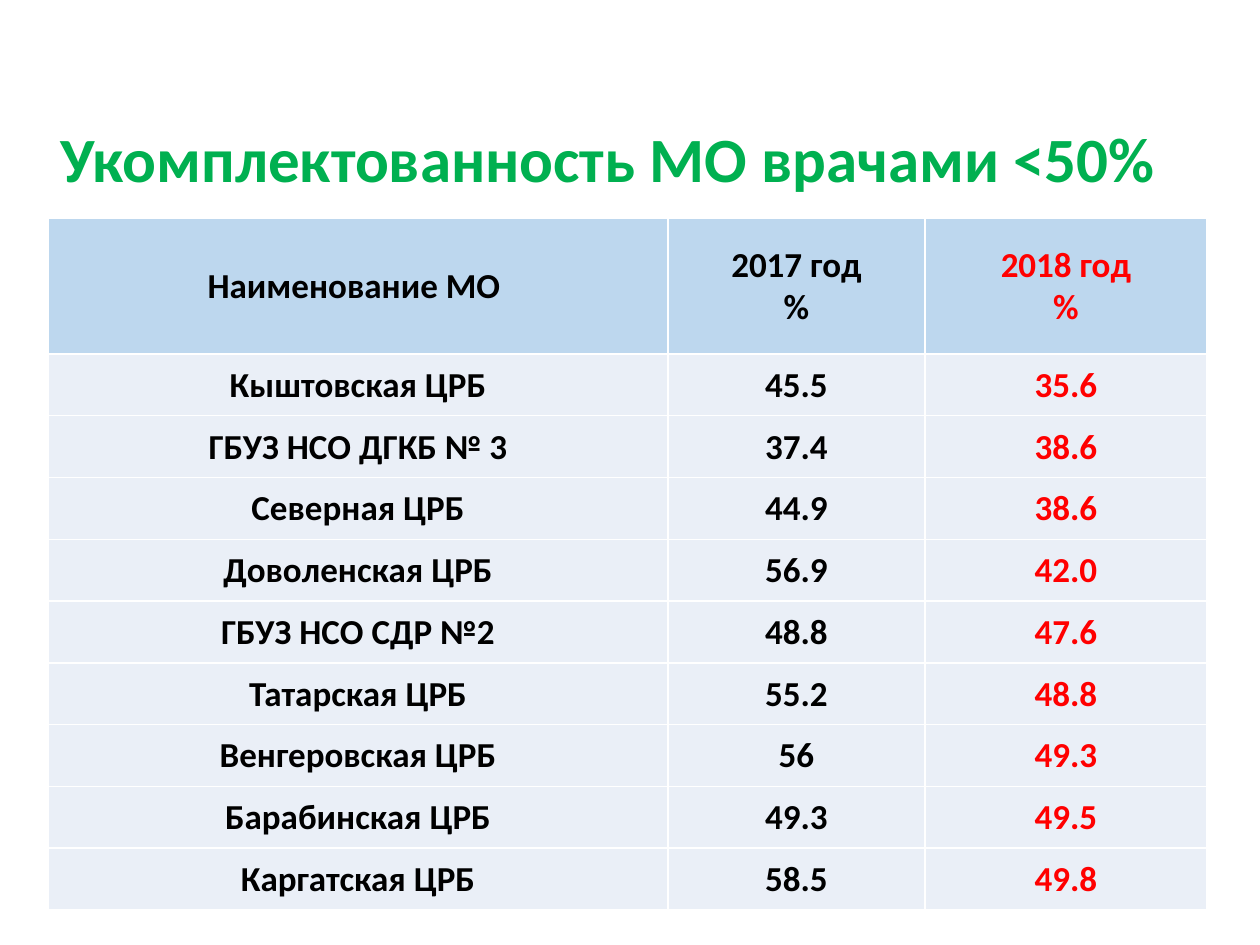
from lxml.etree import SubElement
from pptx import Presentation
from pptx.dml.color import RGBColor
from pptx.enum.text import MSO_ANCHOR as Anchor, MSO_AUTO_SIZE as Fit, PP_ALIGN as Align
from pptx.oxml.ns import qn
from pptx.util import Emu, Pt

SCALE = 914400 // 126
BLACK, RED, GREEN, WHITE = "000000", "FF0000", "00B050", "FFFFFF"
HEAD_FILL, BODY_FILL = "BDD7EE", "EAEFF7"
LEFT, TOP, HEIGHT, HEAD = 48, 218, 692, 136
WIDTHS = [620, 257, 282]
INKS = [BLACK, BLACK, RED]

ROWS = [
    ("Наименование МО ", "2017 год\n%", "2018 год\n%"),
    ("Кыштовская ЦРБ", "45.5", "35.6"),
    ("ГБУЗ НСО ДГКБ № 3", "37.4", "38.6"),
    ("Северная ЦРБ", "44.9", "38.6"),
    ("Доволенская ЦРБ", "56.9", "42.0"),
    ("ГБУЗ НСО СДР №2", "48.8", "47.6"),
    ("Татарская ЦРБ", "55.2", "48.8"),
    ("Венгеровская ЦРБ", "56", "49.3"),
    ("Барабинская ЦРБ", "49.3", "49.5"),
    ("Каргатская ЦРБ", "58.5", "49.8"),
]


def px(n):
    return Emu(n * SCALE)


def color(code):
    return RGBColor.from_string(code)


def style(frame, size, ink, align):
    for para in frame.paragraphs:
        para.alignment = align
        font = para.font
        font.name, font.size, font.bold = "Calibri", Pt(size), True
        font.color.rgb = color(ink)


def add_borders(cell):
    props = cell._tc.get_or_add_tcPr()
    for side in ("lnL", "lnR", "lnT", "lnB"):
        line = SubElement(props, qn(f"a:{side}"), w=str(Pt(1)))
        fill = SubElement(line, qn("a:solidFill"))
        SubElement(fill, qn("a:srgbClr"), val=WHITE)


def fill_cell(cell, text, ink, fill):
    cell.text = text
    style(cell.text_frame, 20, ink, Align.CENTER)
    cell.vertical_anchor = Anchor.MIDDLE
    cell.margin_left = cell.margin_right = cell.margin_top = px(1)
    cell.margin_bottom = 0
    add_borders(cell)
    cell.fill.solid()
    cell.fill.fore_color.rgb = color(fill)


def add_staff_table(slide):
    frame = slide.shapes.add_table(len(ROWS), len(WIDTHS), px(LEFT), px(TOP),
                                   px(sum(WIDTHS)), px(HEIGHT))
    table = frame.table
    table.horz_banding = False
    for col, width in zip(table.columns, WIDTHS):
        col.width = px(width)
    for r, texts in enumerate(ROWS):
        body = px(HEIGHT - HEAD) // (len(ROWS) - 1)
        table.rows[r].height = body if r else px(HEAD)
        for c, text in enumerate(texts):
            fill_cell(table.cell(r, c), text, INKS[c], BODY_FILL if r else HEAD_FILL)


def add_title(slide, text):
    frame = slide.shapes.add_textbox(px(LEFT), px(113), px(1145), px(89)).text_frame
    frame.word_wrap = False
    frame.auto_size = Fit.SHAPE_TO_FIT_TEXT
    frame.text = text
    style(frame, 36, GREEN, Align.LEFT)


def main():
    deck = Presentation()
    deck.slide_width, deck.slide_height = px(1260), px(945)
    slide = deck.slides.add_slide(deck.slide_layouts[6])
    add_staff_table(slide)
    add_title(slide, "Укомплектованность МО врачами <50%")
    deck.save("out.pptx")


if __name__ == "__main__":
    main()
